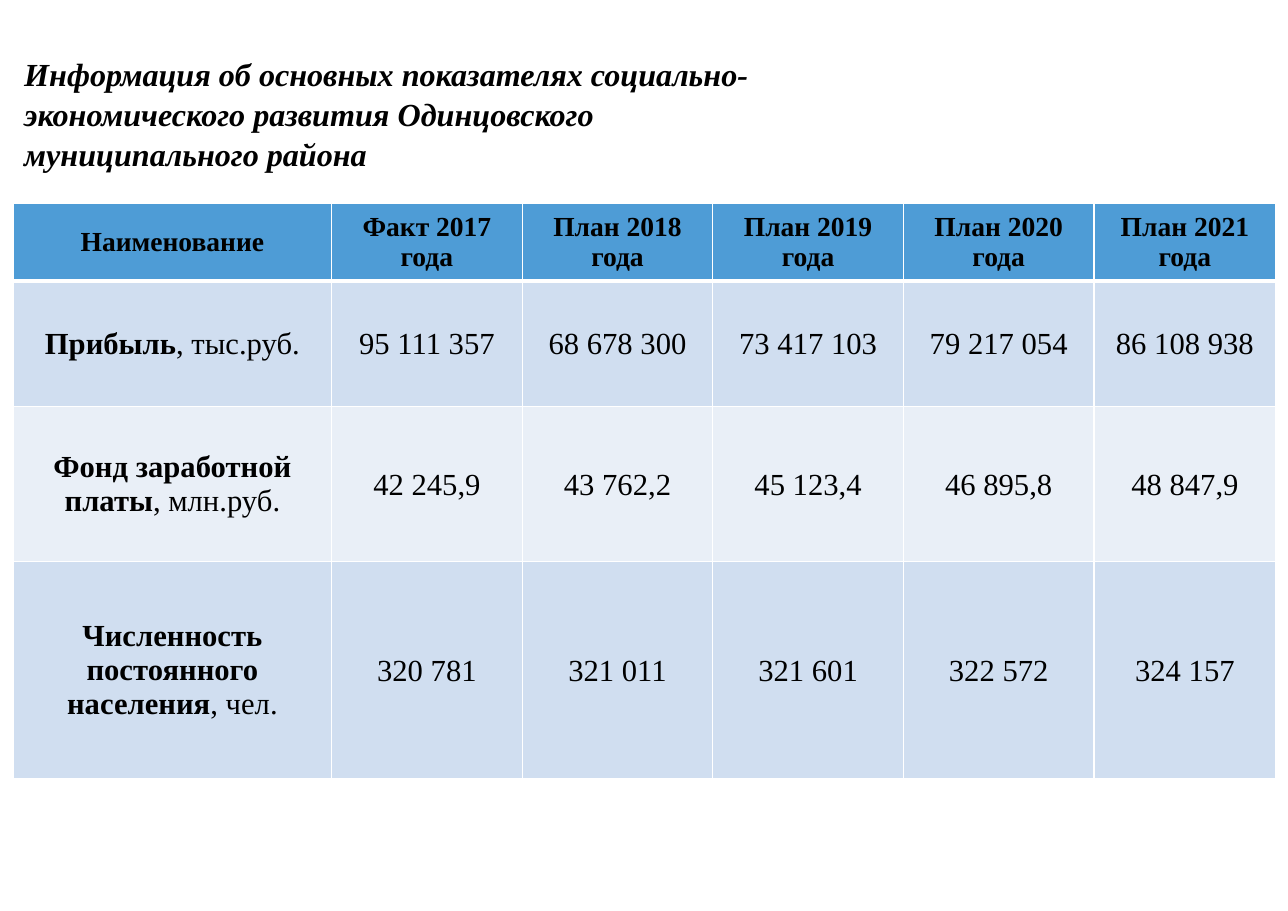
"""Builds a slide with a table of district economic indicators."""
from dataclasses import dataclass

from lxml.etree import SubElement
from pptx import Presentation
from pptx.dml.color import RGBColor
from pptx.enum.text import MSO_ANCHOR, MSO_AUTO_SIZE, PP_ALIGN
from pptx.oxml.ns import qn
from pptx.util import Inches, Pt

COLORS = {
    "text": "000000",
    "header": "4E9CD6",
    "band_dark": "D0DEF0",
    "band_light": "E9EFF7",
    "border": "FFFFFF",
}
FONT = "Times New Roman"
TITLE = (
    "Информация об основных показателях социально-экономического развития "
    "Одинцовского муниципального района"
)
HEADERS = ["Наименование", "Факт 2017 года"] + [
    f"План {year} года" for year in range(2018, 2022)
]
COLUMN_WIDTHS = [2.89] + [1.73] * 4 + [1.65]
HEADER_HEIGHT = 0.67


@dataclass
class Indicator:
    """One table row: name, unit, yearly values and row height."""

    name: str
    unit: str
    values: list[str]
    height: float


INDICATORS = [
    Indicator(
        "Прибыль", ", тыс.руб.",
        ["95 111 357", "68 678 300", "73 417 103", "79 217 054", "86 108 938"], 1.14,
    ),
    Indicator(
        "Фонд заработной платы", ", млн.руб.",
        ["42 245,9", "43 762,2", "45 123,4", "46 895,8", "48 847,9"], 1.41,
    ),
    Indicator(
        "Численность постоянного населения", ", чел.",
        ["320 781", "321 011", "321 601", "322 572", "324 157"], 1.97,
    ),
]


def format_span(span, size: float, bold: bool, italic: bool = False) -> None:
    """Apply the slide's font to one run."""
    span.font.name = FONT
    span.font.size = Pt(size)
    span.font.bold = bold
    span.font.italic = italic
    span.font.color.rgb = RGBColor.from_string(COLORS["text"])


def set_borders(cell, bottom: float) -> None:
    """Draw white borders round a cell, the bottom one of the given width."""
    properties = cell._tc.get_or_add_tcPr()
    widths = {"a:lnL": 1, "a:lnR": 1, "a:lnT": 1, "a:lnB": bottom}
    for position, (tag, width) in enumerate(widths.items()):
        line = SubElement(properties, qn(tag), w=str(Pt(width)))
        fill = SubElement(line, qn("a:solidFill"))
        SubElement(fill, qn("a:srgbClr"), val=COLORS["border"])
        properties.insert(position, line)


def fill_cell(cell, texts: list[tuple[str, bool]], size: float, color: str,
              bottom: float = 1) -> None:
    """Write centred (text, bold) runs into a cell and colour it."""
    para = cell.text_frame.paragraphs[0]
    para.alignment = PP_ALIGN.CENTER
    for text, bold in texts:
        span = para.add_run()
        span.text = text
        format_span(span, size, bold)
    cell.vertical_anchor = MSO_ANCHOR.MIDDLE
    cell.fill.solid()
    cell.fill.fore_color.rgb = RGBColor.from_string(COLORS[color])
    set_borders(cell, bottom)


def add_title(page) -> None:
    """Place and format the title placeholder."""
    box = page.shapes.title
    box.left, box.top = Inches(0.12), Inches(0.43)
    box.width, box.height = Inches(7.3), Inches(1.16)
    frame = box.text_frame
    frame.text = TITLE
    frame.word_wrap = True
    frame.auto_size = MSO_AUTO_SIZE.SHAPE_TO_FIT_TEXT
    frame.vertical_anchor = MSO_ANCHOR.TOP
    para = frame.paragraphs[0]
    para.alignment = PP_ALIGN.LEFT
    para.line_spacing = 1.04
    format_span(para.runs[0], 21, True, True)


def add_indicator_table(page) -> None:
    """Add the table of indicators by year."""
    heights = [HEADER_HEIGHT] + [indicator.height for indicator in INDICATORS]
    table = page.shapes.add_table(
        len(heights), len(HEADERS), Inches(0.12), Inches(1.85),
        Inches(sum(COLUMN_WIDTHS)), Inches(sum(heights)),
    ).table
    for column, width in zip(table.columns, COLUMN_WIDTHS):
        column.width = Inches(width)
    for row, height in zip(table.rows, heights):
        row.height = Inches(height)
    for index, header in enumerate(HEADERS):
        fill_cell(table.cell(0, index), [(header, True)], 18, "header", 3)
    for number, indicator in enumerate(INDICATORS, start=1):
        color = "band_dark" if number % 2 else "band_light"
        names = [(indicator.name, True), (indicator.unit, False)]
        fill_cell(table.cell(number, 0), names, 20, color)
        for index, value in enumerate(indicator.values, start=1):
            cell = table.cell(number, index)
            cell.margin_left = cell.margin_right = cell.margin_top = Inches(0.01)
            cell.margin_bottom = 0
            fill_cell(cell, [(value, False)], 20, color)


def main() -> None:
    """Build and save the deck."""
    deck = Presentation()
    deck.slide_width, deck.slide_height = Inches(11.69), Inches(8.27)
    page = deck.slides.add_slide(deck.slide_layouts[5])
    add_title(page)
    add_indicator_table(page)
    deck.save("out.pptx")


if __name__ == "__main__":
    main()
